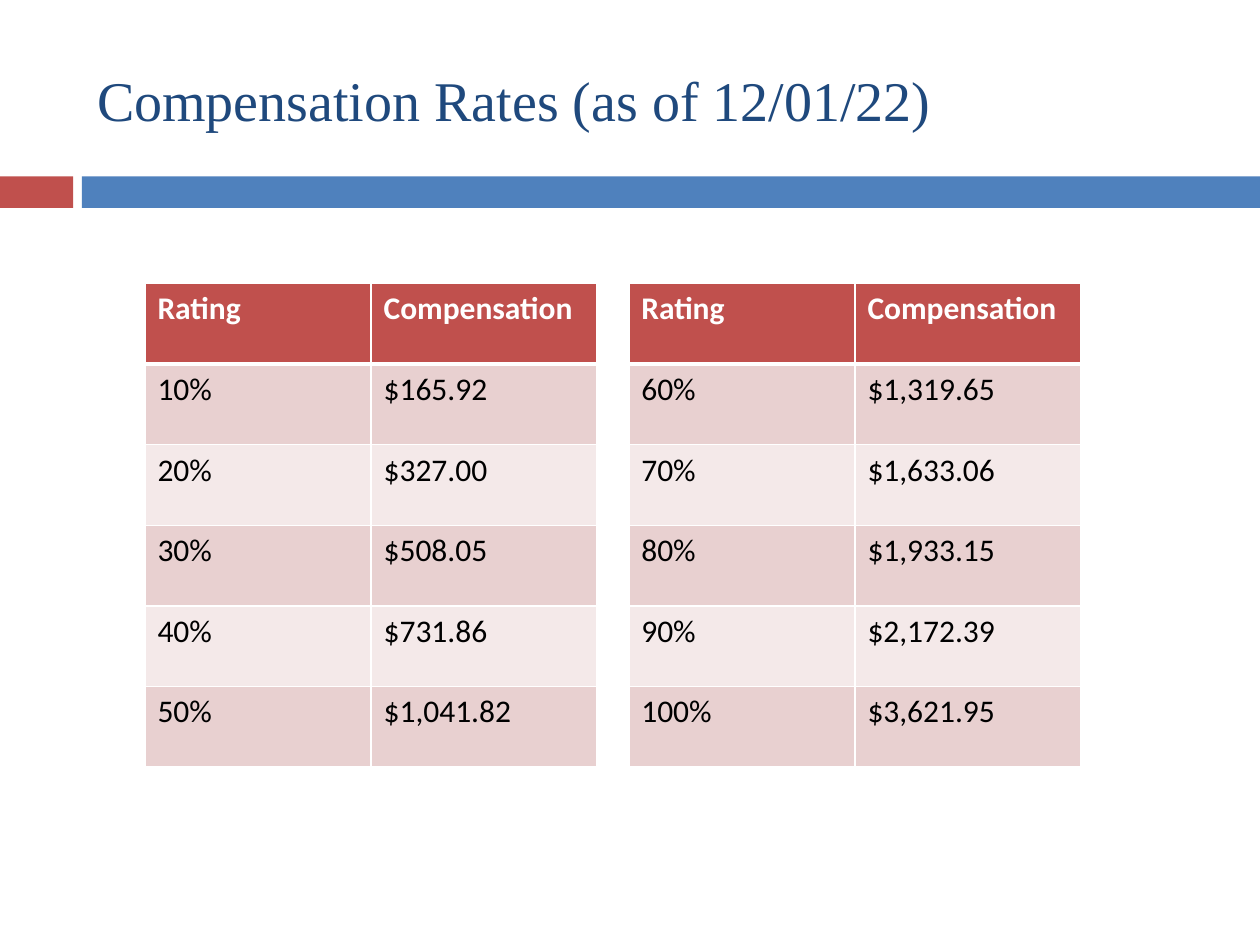
from lxml.etree import SubElement
from pptx import Presentation
from pptx.dml.color import RGBColor
from pptx.enum.shapes import MSO_SHAPE
from pptx.enum.text import MSO_ANCHOR, PP_ALIGN
from pptx.oxml.ns import qn
from pptx.util import Inches, Pt

RED = RGBColor(0xC0, 0x50, 0x4D)
BLUE = RGBColor(0x4F, 0x81, 0xBD)
NAVY = RGBColor(0x1F, 0x49, 0x7D)
DARK_BAND = RGBColor(0xE8, 0xD0, 0xD0)
LIGHT_BAND = RGBColor(0xF4, 0xE9, 0xE9)
WHITE = RGBColor(0xFF, 0xFF, 0xFF)
BLACK = RGBColor(0, 0, 0)

HEADER = ("Rating", "Compensation")
LOW_RATES = [("10%", "$165.92"), ("20%", "$327.00"), ("30%", "$508.05"),
             ("40%", "$731.86"), ("50%", "$1,041.82")]
HIGH_RATES = [("60%", "$1,319.65"), ("70%", "$1,633.06"), ("80%", "$1,933.15"),
              ("90%", "$2,172.39"), ("100%", "$3,621.95")]


def set_borders(cell, widths):
    """Draw white cell borders; widths maps a side (L, R, T, B) to points."""
    properties = cell._tc.get_or_add_tcPr()
    for side, width in widths.items():
        line = SubElement(properties, qn(f"a:ln{side}"), w=str(Pt(width)))
        fill = SubElement(line, qn("a:solidFill"))
        SubElement(fill, qn("a:srgbClr"), val=str(WHITE))


prs = Presentation()
prs.slide_width, prs.slide_height = Inches(10), Inches(7.5)
slide = prs.slides.add_slide(prs.slide_layouts[5])

# Divider below the title
for left, width, color in ((0, 0.58, RED), (0.65, 9.35, BLUE)):
    bar = slide.shapes.add_shape(MSO_SHAPE.RECTANGLE, Inches(left), Inches(1.4),
                                 Inches(width), Inches(0.25))
    bar.shadow.inherit = False
    bar.fill.solid()
    bar.fill.fore_color.rgb = color
    bar.line.fill.background()

title = slide.shapes.title
title.left, title.top = Inches(0.67), Inches(0.25)
title.width, title.height = Inches(8.92), Inches(1.08)
title.text_frame.text = "Compensation Rates (as of 12/01/22)"
title.text_frame.vertical_anchor = MSO_ANCHOR.MIDDLE
heading = title.text_frame.paragraphs[0]
heading.alignment = PP_ALIGN.LEFT
heading_font = heading.runs[0].font
heading_font.name, heading_font.size = "Times New Roman", Pt(32)
heading_font.color.rgb = NAVY

# Rate tables
for left, rates in ((1.15, LOW_RATES), (4.99, HIGH_RATES)):
    rows = [HEADER] + rates
    table = slide.shapes.add_table(len(rows), len(HEADER), Inches(left), Inches(2.25),
                                   Inches(3.59), Inches(3.84)).table
    for r, row in enumerate(rows):
        is_header = r == 0
        band = RED if is_header else DARK_BAND if r % 2 else LIGHT_BAND
        for c, text in enumerate(row):
            cell = table.cell(r, c)
            set_borders(cell, {"L": 1, "R": 1, "T": 3 if r == 1 else 1,
                               "B": 3 if is_header else 1})
            cell.fill.solid()
            cell.fill.fore_color.rgb = band
            cell.text_frame.text = text
            font = cell.text_frame.paragraphs[0].runs[0].font
            font.name, font.size, font.bold = "Calibri", Pt(18), is_header
            font.color.rgb = WHITE if is_header else BLACK

prs.save("out.pptx")
